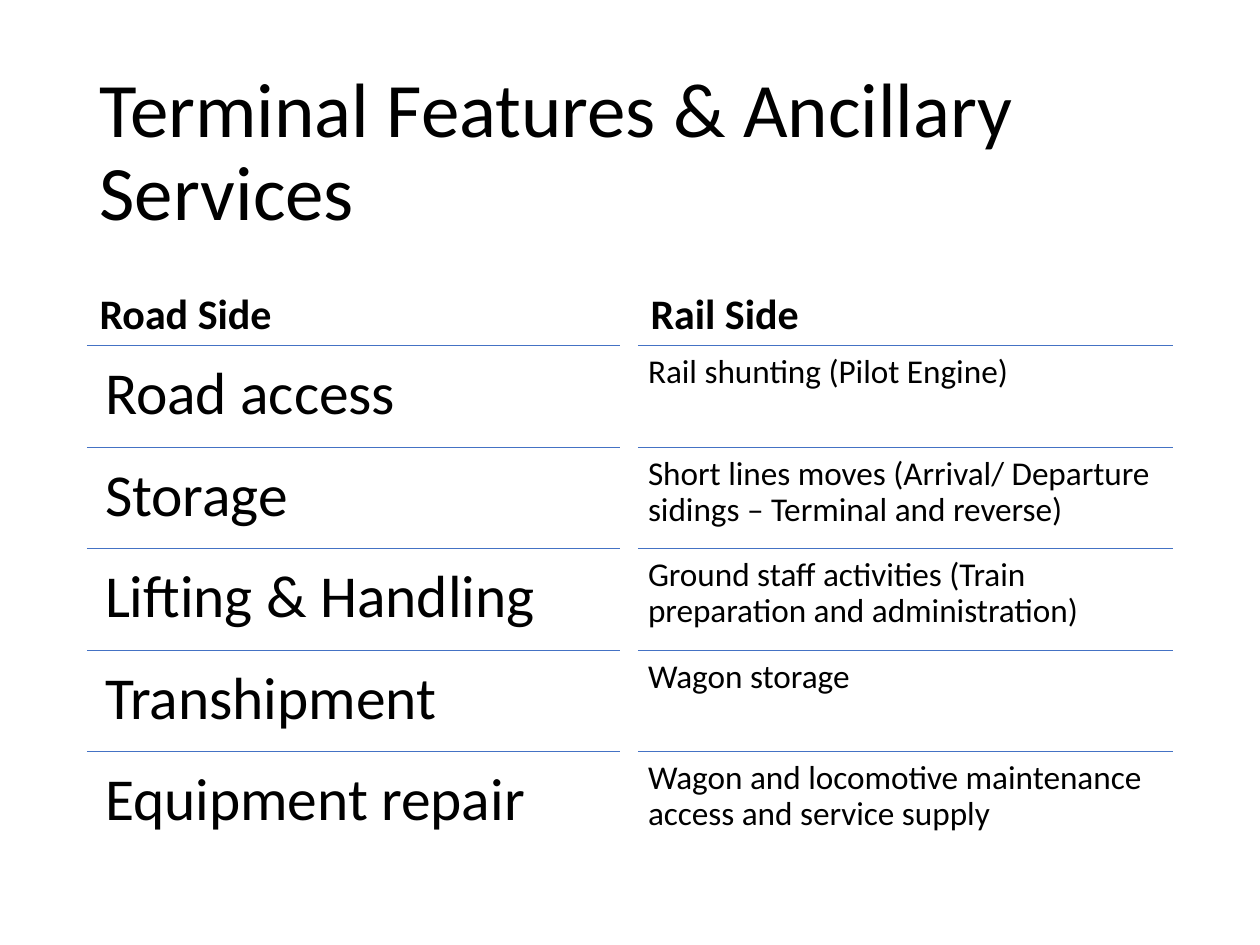
"""Build the terminal features slide with road side and rail side lists."""
from dataclasses import dataclass

from lxml import etree
from pptx import Presentation
from pptx import util as u
from pptx.dml.color import RGBColor
from pptx.enum import shapes, text
from pptx.oxml.ns import qn

PX = u.Inches(1) / 126
BLACK = RGBColor(0x00, 0x00, 0x00)
BLUE = RGBColor(0x44, 0x72, 0xC4)
FONT = "Calibri"
HEADING_TOP, HEADING_HEIGHT = 232, 113
LIST_TOP, LIST_HEIGHT = 345, 508


@dataclass(frozen=True)
class Column:
    heading_idx: int
    list_idx: int
    left: int
    width: int
    heading: str
    size: int
    inset: int
    items: tuple[str, ...]


COLUMNS = (
    Column(1, 2, 87, 533, "Road Side", 34, 18, (
        "Road access",
        "Storage",
        "Lifting & Handling",
        "Transhipment",
        "Equipment repair",
    )),
    Column(3, 4, 638, 535, "Rail Side", 19, 10, (
        "Rail shunting (Pilot Engine)",
        "Short lines moves (Arrival/ Departure sidings – Terminal and reverse)",
        "Ground staff activities (Train preparation and administration)",
        "Wagon storage",
        "Wagon and locomotive maintenance access and service supply",
    )),
)


def px(n: int) -> u.Emu:
    """Turn pixels into EMU."""
    return u.Emu(round(n * PX))


def place(sp, left: int, top: int, width: int, height: int) -> None:
    """Move and size a shape."""
    sp.left, sp.top, sp.width, sp.height = map(px, (left, top, width, height))


def write(sp, words: str, size: int, anchor, bold: bool = False) -> None:
    """Fill a shape with one left-aligned paragraph."""
    tf = sp.text_frame
    tf.word_wrap = True
    tf.auto_size = text.MSO_AUTO_SIZE.NONE
    tf.vertical_anchor = anchor
    p = tf.paragraphs[0]
    p.alignment = text.PP_ALIGN.LEFT
    p.line_spacing = 0.9
    p.space_before = u.Pt(0)
    r = p.add_run()
    r.text = words
    r.font.name = FONT
    r.font.size = u.Pt(size)
    r.font.bold = bold
    r.font.color.rgb = BLACK


def add_rule(group, left: int, top: int, width: int) -> None:
    """Draw the thin line above a list item."""
    line = group.shapes.add_connector(
        shapes.MSO_CONNECTOR.STRAIGHT, px(left), px(top), px(left + width), px(top))
    line.line.color.rgb = BLUE
    line.line.width = u.Pt(0.5)
    etree.SubElement(line._element.spPr, qn("a:effectLst"))


def add_item(group, col: Column, top: int, height: int, words: str) -> None:
    """Write one list item in its row."""
    sp = group.shapes.add_textbox(px(col.left), px(top), px(col.width), px(height))
    tf = sp.text_frame
    tf.margin_left = tf.margin_right = tf.margin_top = tf.margin_bottom = px(col.inset)
    write(sp, words, col.size, text.MSO_ANCHOR.TOP)


def add_column(s, col: Column) -> None:
    """Draw a heading and its ruled list."""
    holders = {sp.placeholder_format.idx: sp for sp in s.placeholders}
    heading = holders[col.heading_idx]
    place(heading, col.left, HEADING_TOP, col.width, HEADING_HEIGHT)
    write(heading, col.heading, 24, text.MSO_ANCHOR.BOTTOM, bold=True)
    unused = holders[col.list_idx]._element
    unused.getparent().remove(unused)

    group = s.shapes.add_group_shape()
    pitch = LIST_HEIGHT / len(col.items)
    for i, words in enumerate(col.items):
        top = LIST_TOP + round(i * pitch)
        add_rule(group, col.left, top, col.width)
        add_item(group, col, top, round(pitch), words)


def main() -> None:
    """Build and save the slide."""
    prs = Presentation()
    prs.slide_width, prs.slide_height = px(1260), px(945)
    s = prs.slides.add_slide(prs.slide_layouts.get_by_name("Comparison"))
    title = s.shapes.title
    place(title, 87, 63, 1086, 183)
    write(title, "Terminal Features & Ancillary Services", 44, text.MSO_ANCHOR.MIDDLE)
    for col in COLUMNS:
        add_column(s, col)
    prs.save("out.pptx")


if __name__ == "__main__":
    main()
